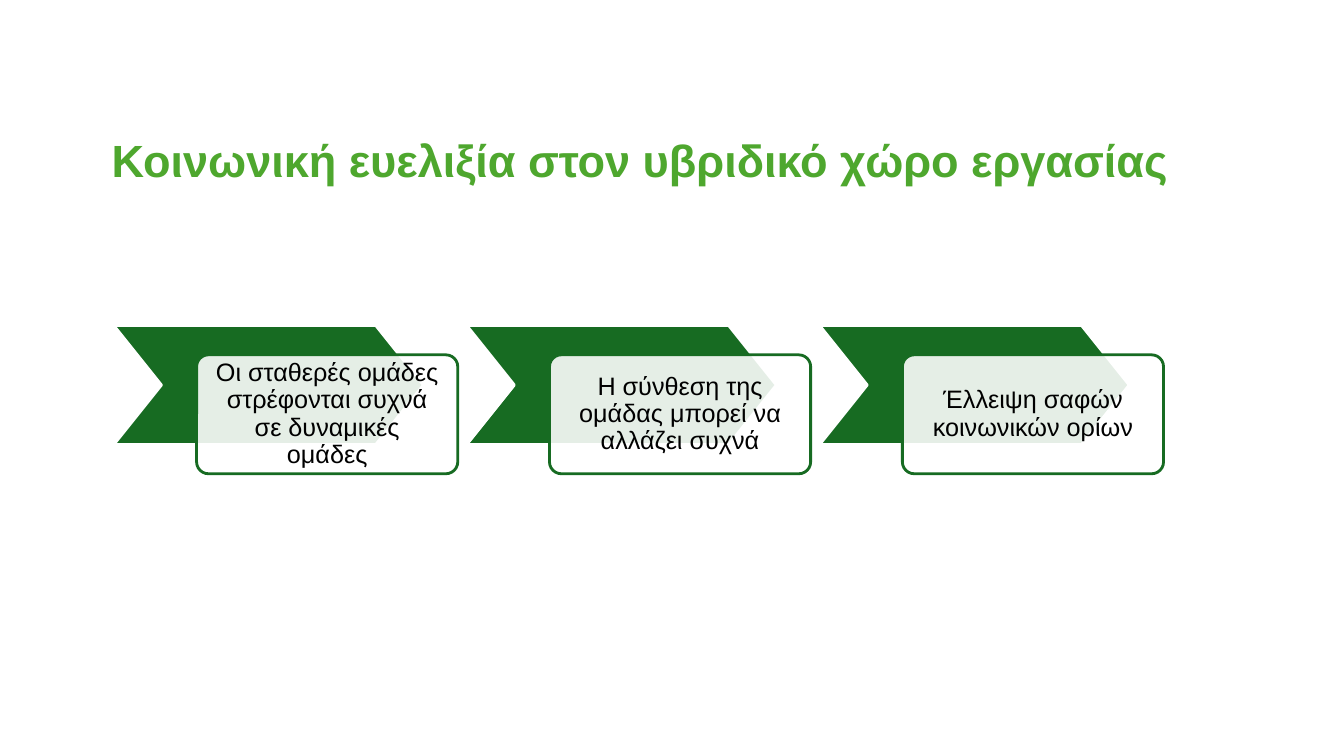
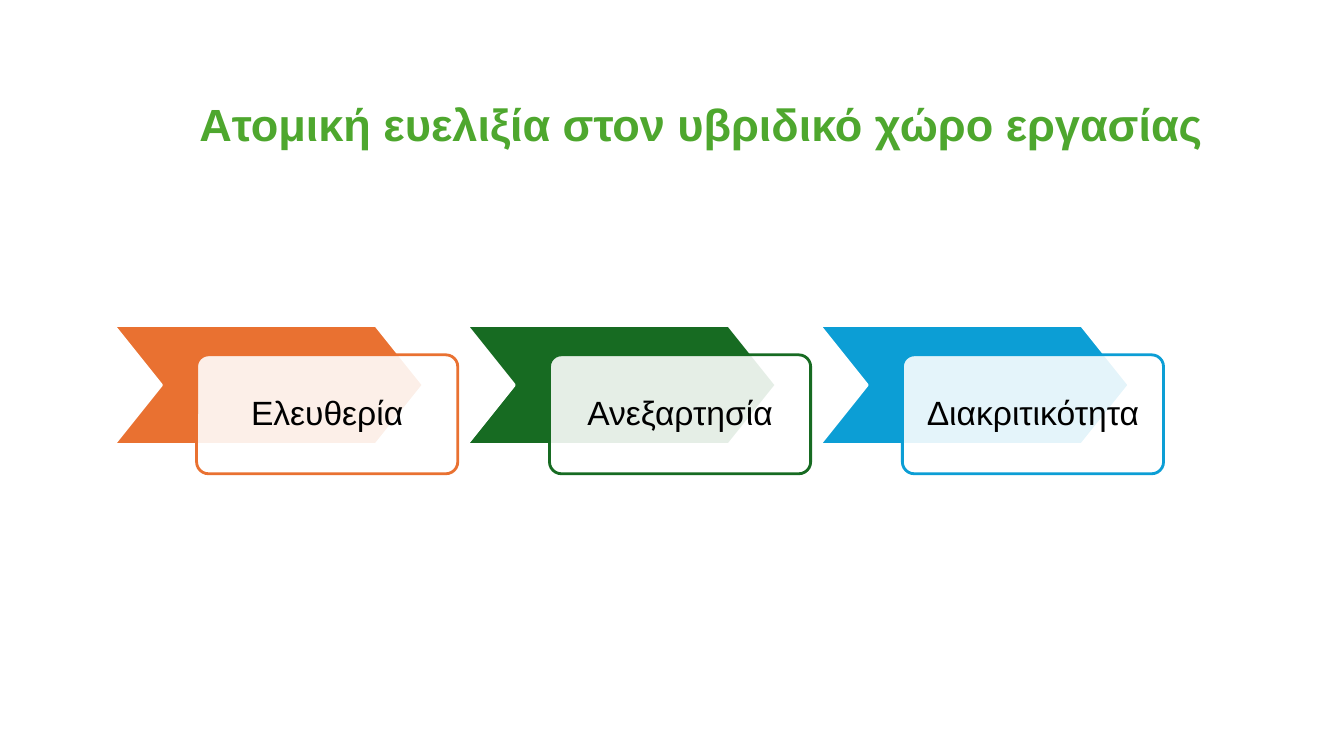
import pptx
import pptx.util
import pptx.dml.color
import pptx.enum.shapes
import pptx.enum.text
import pptx.oxml.ns
import lxml.etree

Inches, Pt = pptx.util.Inches, pptx.util.Pt
SHAPES = pptx.enum.shapes.MSO_SHAPE
MIDDLE = pptx.enum.text.MSO_ANCHOR.MIDDLE
CENTER = pptx.enum.text.PP_ALIGN.CENTER

COLORS = {
    "title": "4EA72E",
    "green": "176B22",
    "orange": "E97131",
    "blue": "0C9ED5",
    "white": "FFFFFF",
    "text": "000000",
}
FONT = "Arial"

SLIDES = [
    {
        "title": "Κοινωνική ευελιξία στον υβριδικό χώρο εργασίας",
        "title_at": (1.01, 1.19),
        "size": 18,
        "inset": 0.14,
        "steps": [
            ("Οι σταθερές ομάδες στρέφονται συχνά σε δυναμικές ομάδες", "green"),
            ("Η σύνθεση της ομάδας μπορεί να αλλάζει συχνά", "green"),
            ("Έλλειψη σαφών κοινωνικών ορίων", "green"),
        ],
    },
    {
        "title": "Ατομική ευελιξία στον υβριδικό χώρο εργασίας",
        "title_at": (1.88, 0.83),
        "size": 24,
        "inset": 0.19,
        "steps": [
            ("Ελευθερία", "orange"),
            ("Ανεξαρτησία", "green"),
            ("Διακριτικότητα", "blue"),
        ],
    },
]

TITLE_WIDTH, TITLE_HEIGHT = 11.45, 0.78
STEP_LEFT, STEP_TOP, STEP_PITCH = 1.13, 3.23, 3.5
CHEVRON_WIDTH, CARD_WIDTH, STEP_HEIGHT = 3.07, 2.59, 1.18
CARD_SHIFT_X, CARD_SHIFT_Y = 0.82, 0.29
CARD_OPACITY = 89


def rgb(name):
    return pptx.dml.color.RGBColor.from_string(COLORS[name])


def set_text(shape, text, size, color, bold=False):
    """Write one vertically centred paragraph and return it."""
    frame = shape.text_frame
    frame.text = text
    frame.word_wrap = True
    frame.vertical_anchor = MIDDLE
    paragraph = frame.paragraphs[0]
    font = paragraph.runs[0].font
    font.name, font.size, font.bold = FONT, Pt(size), bold
    font.color.rgb = rgb(color)
    return paragraph


def add_title(slide, text, left, top):
    box = slide.shapes.add_textbox(
        Inches(left), Inches(top), Inches(TITLE_WIDTH), Inches(TITLE_HEIGHT))
    set_text(box, text, 32.2, "title", bold=True)


def add_block(slide, kind, left, top, width, adjustment, fill, line):
    shape = slide.shapes.add_shape(
        kind, Inches(left), Inches(top), Inches(width), Inches(STEP_HEIGHT))
    shape.shadow.inherit = False
    shape.adjustments[0] = adjustment
    shape.fill.solid()
    shape.fill.fore_color.rgb = rgb(fill)
    shape.line.color.rgb = rgb(line)
    shape.line.width = Pt(2)
    return shape


def set_opacity(shape, percent):
    qn = pptx.oxml.ns.qn
    color = shape.fill._xPr.find(qn("a:solidFill")).find(qn("a:srgbClr"))
    lxml.etree.SubElement(color, qn("a:alpha"), val=str(percent * 1000))


def add_step(slide, left, text, color, size, inset):
    """Draw a chevron with its caption card overlapping the lower right."""
    add_block(slide, SHAPES.CHEVRON, left, STEP_TOP, CHEVRON_WIDTH,
              0.4, color, "white")
    card = add_block(slide, SHAPES.ROUNDED_RECTANGLE, left + CARD_SHIFT_X,
                     STEP_TOP + CARD_SHIFT_Y, CARD_WIDTH, 0.1, "white", color)
    set_opacity(card, CARD_OPACITY)
    paragraph = set_text(card, text, size, "text")
    paragraph.alignment = CENTER
    paragraph.line_spacing = 0.9
    frame = card.text_frame
    frame.margin_left = frame.margin_right = Inches(inset)
    frame.margin_top = frame.margin_bottom = Inches(inset)


def main():
    presentation = pptx.Presentation()
    presentation.slide_width = Inches(13.33)
    presentation.slide_height = Inches(7.5)
    for content in SLIDES:
        slide = presentation.slides.add_slide(presentation.slide_layouts[6])
        add_title(slide, content["title"], *content["title_at"])
        for index, (text, color) in enumerate(content["steps"]):
            add_step(slide, STEP_LEFT + index * STEP_PITCH, text, color,
                     content["size"], content["inset"])
    presentation.save("out.pptx")


if __name__ == "__main__":
    main()
